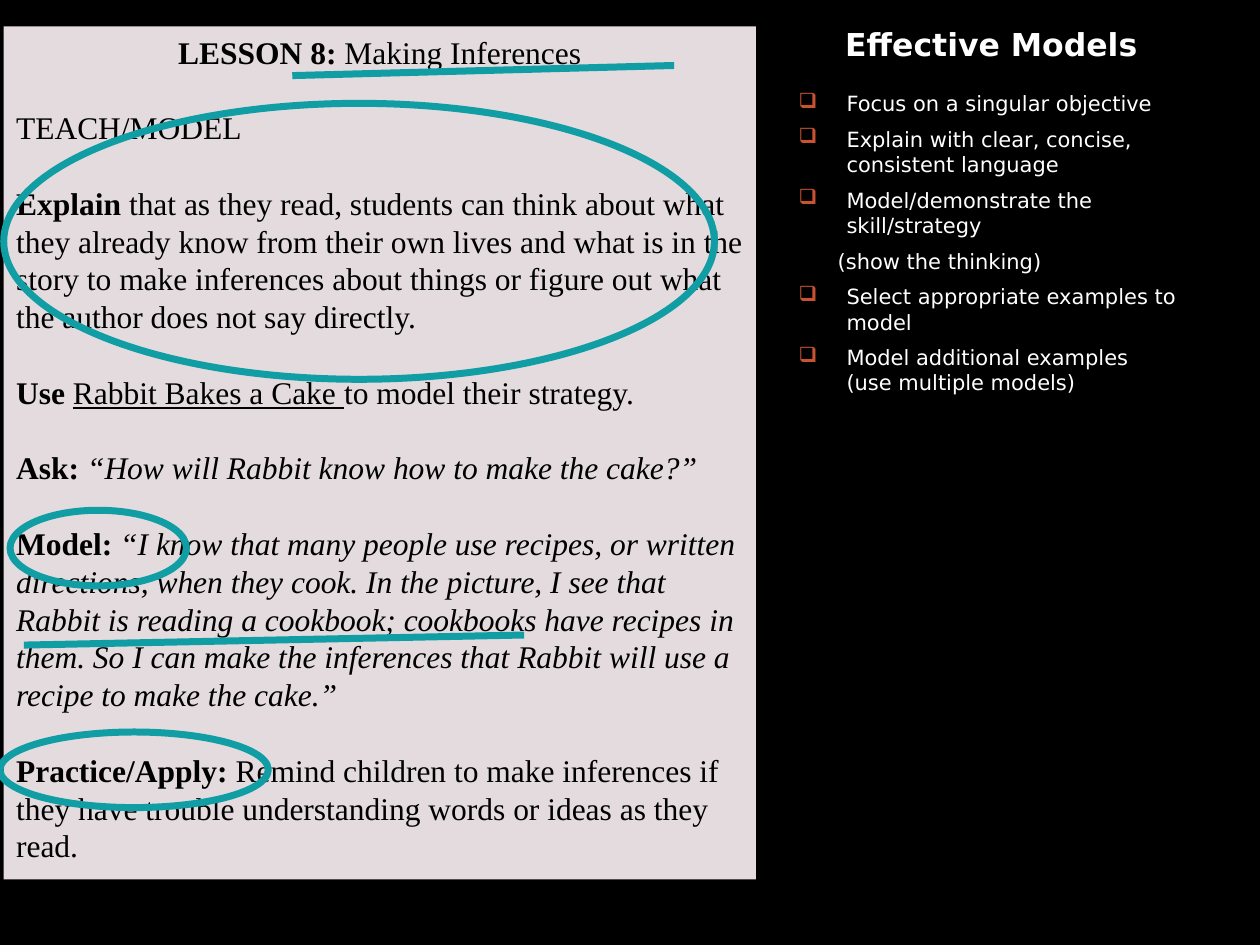
from typing import NamedTuple

from lxml.etree import SubElement
from pptx import Presentation
from pptx.dml.color import RGBColor
from pptx.enum.shapes import MSO_CONNECTOR, MSO_SHAPE
from pptx.enum.text import MSO_ANCHOR, PP_ALIGN
from pptx.oxml.ns import qn
from pptx.util import Inches, Pt

BLACK = RGBColor(0x00, 0x00, 0x00)
WHITE = RGBColor(0xFF, 0xFF, 0xFF)
PAPER = RGBColor(0xE3, 0xDB, 0xDE)
TEAL = RGBColor(0x11, 0x9D, 0xA4)
RUST = "C95331"
SERIF, SANS = "Times New Roman", "DejaVu Sans"
LINE = Pt(4)


class Box(NamedTuple):
    left: float
    top: float
    width: float
    height: float


class Stroke(NamedTuple):
    x1: float
    y1: float
    x2: float
    y2: float


class Part(NamedTuple):
    lead: str
    rest: str
    italic: bool = False
    title: str = ""


class Point(NamedTuple):
    text: str
    bullet: bool = True


LESSON = [
    Part("LESSON 8: ", "Making Inferences"),
    Part("", "TEACH/MODEL"),
    Part("Explain ", "that as they read, students can think about what they "
         "already know from their own lives and what is in the story to make "
         "inferences about things or figure out what the author does not say "
         "directly."),
    Part("Use ", "to model their strategy.", title="Rabbit Bakes a Cake "),
    Part("Ask: ", "“How will Rabbit know how to make the cake?”", True),
    Part("Model: ", "“I know that many people use recipes, or written "
         "directions, when they cook. In the picture, I see that Rabbit is "
         "reading a cookbook; cookbooks have recipes in them. So I can make "
         "the inferences that Rabbit will use a recipe to make the cake.”",
         True),
    Part("Practice/Apply: ", "Remind children to make inferences if they have "
         "trouble understanding words or ideas as they read."),
]
POINTS = [
    Point("Focus on a singular objective"),
    Point("Explain with clear, concise, consistent language"),
    Point("Model/demonstrate the skill/strategy"),
    Point("(show the thinking)", False),
    Point("Select appropriate examples to model"),
    Point("Model additional examples \v(use multiple models)"),
]
RINGS = [
    Box(0.03, 0.82, 5.64, 2.19),
    Box(0.08, 4.05, 1.4, 0.6),
    Box(0, 5.81, 2.13, 0.6),
]
STROKES = [Stroke(2.32, 0.6, 5.35, 0.52), Stroke(0.19, 5.12, 4.16, 5.04)]


def inches(spot: tuple) -> list:
    return [Inches(n) for n in spot]


def add_text(para, text: str, *, font: str, size: float, color: RGBColor,
             bold=False, italic=False, line=False) -> None:
    """Append text to a paragraph; a vertical tab breaks the line."""
    for i, piece in enumerate(text.split("\v")):
        if i:
            para.add_line_break()
        run = para.add_run()
        run.text = piece
        face = run.font
        face.name, face.size = font, Pt(size)
        face.bold, face.italic, face.underline = bold, italic, line
        face.color.rgb = color


def next_para(frame, first: bool):
    return frame.paragraphs[0] if first else frame.add_paragraph()


def indent(para, left: float, hang: float = 0, bullet: str = "") -> None:
    props = para._p.get_or_add_pPr()
    props.set("marL", str(Inches(left)))
    props.set("indent", str(-Inches(hang)))
    if bullet:
        color = SubElement(props, qn("a:buClr"))
        SubElement(color, qn("a:srgbClr"), val=RUST)
        SubElement(props, qn("a:buChar"), char=bullet)


def add_box(slide, box: Box):
    frame = slide.shapes.add_textbox(*inches(box)).text_frame
    frame.word_wrap = True
    return frame


def add_lesson(slide, box: Box) -> None:
    page = slide.shapes.add_shape(MSO_SHAPE.RECTANGLE, *inches(box))
    page.shadow.inherit = False
    page.fill.solid()
    page.fill.fore_color.rgb = PAPER
    page.line.fill.background()
    frame = page.text_frame
    frame.word_wrap = True
    frame.vertical_anchor = MSO_ANCHOR.TOP
    look = dict(font=SERIF, size=18, color=BLACK)
    for i, part in enumerate(LESSON):
        para = next_para(frame, i == 0)
        para.alignment = PP_ALIGN.LEFT if i else PP_ALIGN.CENTER
        para.line_spacing = Pt(21.6)
        if i:
            para.space_before = Pt(21.6)
        if part.lead:
            add_text(para, part.lead, bold=True, **look)
        if part.title:
            add_text(para, part.title, line=True, **look)
        add_text(para, part.rest, italic=part.italic, **look)


def add_points(slide, box: Box) -> None:
    frame = add_box(slide, box)
    for i, point in enumerate(POINTS):
        para = next_para(frame, i == 0)
        if i:
            para.space_before = Pt(6)
        if point.bullet:
            indent(para, 0.38, 0.38, "❑")
        else:
            indent(para, 0.31)
        add_text(para, point.text, font=SANS, size=12, color=WHITE)


def add_title(slide, box: Box) -> None:
    para = add_box(slide, box).paragraphs[0]
    para.line_spacing = 1.1
    add_text(para, "Effective Models", font=SANS, size=18, color=WHITE,
             bold=True)


def add_ring(slide, box: Box) -> None:
    ring = slide.shapes.add_shape(MSO_SHAPE.OVAL, *inches(box))
    ring.shadow.inherit = False
    ring.fill.background()
    ring.line.color.rgb, ring.line.width = TEAL, LINE


def add_stroke(slide, stroke: Stroke) -> None:
    link = slide.shapes.add_connector(MSO_CONNECTOR.STRAIGHT, *inches(stroke))
    link.line.color.rgb, link.line.width = TEAL, LINE
    SubElement(link._element.spPr, qn("a:effectLst"))


def main() -> None:
    deck = Presentation()
    deck.slide_width, deck.slide_height = Inches(10), Inches(7.5)
    slide = deck.slides.add_slide(deck.slide_layouts[6])
    slide.background.fill.solid()
    slide.background.fill.fore_color.rgb = BLACK
    add_lesson(slide, Box(0.03, 0.21, 5.97, 6.77))
    add_points(slide, Box(6.24, 0.67, 3.58, 2.54))
    add_title(slide, Box(6.61, 0.12, 3.09, 0.47))
    for ring in RINGS:
        add_ring(slide, ring)
    for stroke in STROKES:
        add_stroke(slide, stroke)
    deck.save("out.pptx")


if __name__ == "__main__":
    main()
